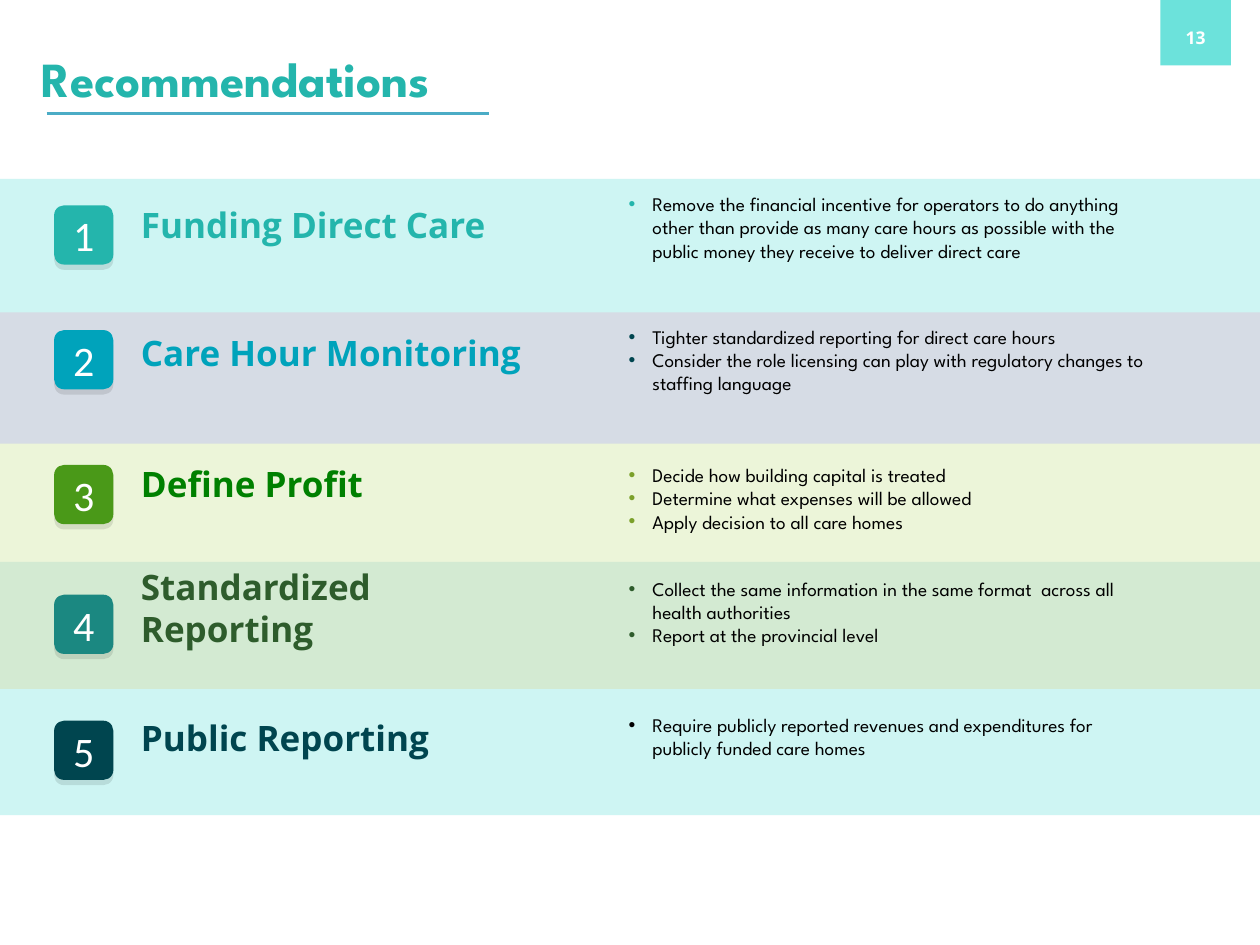
from dataclasses import dataclass

from lxml import etree
from pptx import Presentation
from pptx.dml.color import RGBColor
from pptx.enum.shapes import MSO_CONNECTOR, MSO_SHAPE
from pptx.enum.text import MSO_ANCHOR, MSO_AUTO_SIZE, PP_ALIGN
from pptx.oxml import parse_xml
from pptx.oxml.ns import nsdecls, qn
from pptx.util import Inches, Pt

RECT = MSO_SHAPE.RECTANGLE
ROUNDED = MSO_SHAPE.ROUNDED_RECTANGLE
STRAIGHT = MSO_CONNECTOR.STRAIGHT
MIDDLE = MSO_ANCHOR.MIDDLE
BOTTOM = MSO_ANCHOR.BOTTOM
LEFT = PP_ALIGN.LEFT
CENTER = PP_ALIGN.CENTER
NO_FIT = MSO_AUTO_SIZE.NONE
GROW = MSO_AUTO_SIZE.SHAPE_TO_FIT_TEXT

DISPLAY_FONT = "League Spartan"
HEADING_FONT = "Open Sans"
NUMBER_FONT = "Calibri"

COLORS = {
    "black": "000000",
    "white": "FFFFFF",
    "aqua": "6CE2DB",
    "teal": "24B5AC",
    "cyan": "00A3BB",
    "petrol": "00454F",
    "leaf": "4A9918",
    "green": "008000",
    "olive": "7BA02A",
    "forest": "2E5C2C",
    "sea": "1B8881",
    "rule": "4BACC6",
    "pale aqua": "CEF5F3",
    "pale gray": "D6DCE5",
    "pale lime": "ECF5D9",
    "pale green": "D3EAD2",
}


@dataclass
class Recommendation:
    heading: str
    points: list
    band: tuple
    band_color: str
    badge_top: float
    badge_color: str
    heading_box: tuple
    heading_color: str
    points_box: tuple
    bullet_color: str


RECOMMENDATIONS = [
    Recommendation(
        "Funding Direct Care",
        ["Remove the financial incentive for operators to do anything other than provide "
         "as many care hours as possible with the public money they receive to deliver direct care"],
        (1.42, 1.1), "pale aqua", 1.63, "teal",
        (1.66, 3.58, 0.24), "teal", (1.48, 0.84), "teal"),
    Recommendation(
        "Care Hour Monitoring",
        ["Tighter standardized reporting for direct care hours",
         "Consider the role licensing can play with regulatory changes to staffing language"],
        (2.48, 1.12), "pale gray", 2.62, "cyan",
        (2.61, 3.35, 0.37), "cyan", (2.53, 0.66), "petrol"),
    Recommendation(
        "Define Profit",
        ["Decide how building capital is treated",
         "Determine what expenses will be allowed",
         "Apply decision to all care homes"],
        (3.52, 1.18), "pale lime", 3.69, "leaf",
        (3.65, 2.28, 0.38), "green", (3.63, 0.84), "olive"),
    Recommendation(
        "Standardized Reporting",
        ["Collect the same information in the same format  across all health authorities",
         "Report at the provincial level"],
        (4.46, 1.34), "pale green", 4.72, "sea",
        (4.59, 3.35, 0.47), "forest", (4.53, 0.84), "forest"),
    Recommendation(
        "Public Reporting",
        ["Require publicly reported revenues and expenditures for publicly funded care homes"],
        (5.47, 1), "pale aqua", 5.72, "petrol",
        (5.5, 2.72, 0.71), "petrol", (5.61, 0.47), "black"),
]


def rgb(color):
    return RGBColor.from_string(COLORS[color])


def write(paragraph, text, font, size, color, bold=False, align=LEFT):
    paragraph.alignment = align
    run = paragraph.add_run()
    run.text = text
    run.font.name = font
    run.font.size = Pt(size)
    run.font.bold = bold
    run.font.color.rgb = rgb(color)


def add_block(slide, preset, left, top, width, height, color):
    block = slide.shapes.add_shape(
        preset, Inches(left), Inches(top), Inches(width), Inches(height))
    block.shadow.inherit = False
    block.fill.solid()
    block.fill.fore_color.rgb = rgb(color)
    block.line.fill.background()
    return block


def add_frame(slide, left, top, width, height):
    box = slide.shapes.add_textbox(Inches(left), Inches(top), Inches(width), Inches(height))
    box.text_frame.word_wrap = True
    return box.text_frame


def add_title(slide, text):
    title = slide.shapes.title
    title.left, title.top = Inches(0.23), Inches(0.34)
    title.width, title.height = Inches(8.07), Inches(0.56)
    frame = title.text_frame
    frame.auto_size = NO_FIT
    frame.vertical_anchor = MIDDLE
    write(frame.paragraphs[0], text, DISPLAY_FONT, 28, "teal", bold=True)


def add_title_rule(slide):
    rule = slide.shapes.add_connector(
        STRAIGHT, Inches(0.37), Inches(0.9), Inches(3.88), Inches(0.9))
    rule.line.color.rgb = rgb("rule")
    rule.line.width = Pt(2)
    etree.SubElement(rule._element.spPr, qn("a:effectLst"))


def add_page_number(slide, number):
    tab = add_block(slide, RECT, 9.21, -0.19, 0.56, 0.71, "aqua")
    frame = tab.text_frame
    frame.vertical_anchor = BOTTOM
    frame.margin_bottom = Inches(0.14)
    write(frame.paragraphs[0], number, HEADING_FONT, 10, "white", bold=True, align=CENTER)


def add_badge(slide, number, top, color):
    badge = add_block(slide, ROUNDED, 0.43, top, 0.47, 0.47, color)
    badge._element.spPr.find(qn("a:effectLst")).append(parse_xml(
        f'<a:outerShdw {nsdecls("a")} blurRad="0" dist="{Pt(3)}" dir="5400000" rotWithShape="0">'
        f'<a:srgbClr val="{COLORS["black"]}"><a:alpha val="10000"/></a:srgbClr></a:outerShdw>'))
    frame = badge.text_frame
    frame.word_wrap = False
    frame.vertical_anchor = MIDDLE
    write(frame.paragraphs[0], str(number), NUMBER_FONT, 24, "white", align=CENTER)


def add_heading(slide, text, box, color):
    frame = add_frame(slide, 1.02, *box)
    frame.vertical_anchor = MIDDLE
    write(frame.paragraphs[0], text, HEADING_FONT, 20, color, bold=True)


def set_bullet(paragraph, color):
    properties = paragraph._p.get_or_add_pPr()
    indent = Inches(0.19)
    properties.set("marL", str(indent))
    properties.set("indent", str(-indent))
    bullet_color = etree.SubElement(properties, qn("a:buClr"))
    etree.SubElement(bullet_color, qn("a:srgbClr"), val=COLORS[color])
    etree.SubElement(properties, qn("a:buFont"), typeface="Arial")
    etree.SubElement(properties, qn("a:buChar"), char="•")


def add_points(slide, points, box, bullet_color):
    top, height = box
    frame = add_frame(slide, 4.89, top, 4.37, height)
    frame.auto_size = GROW
    for index, point in enumerate(points):
        paragraph = frame.add_paragraph() if index else frame.paragraphs[0]
        write(paragraph, point, DISPLAY_FONT, 11, "black")
        set_bullet(paragraph, bullet_color)


def main():
    deck = Presentation()
    deck.slide_width, deck.slide_height = Inches(10), Inches(7.5)
    slide = deck.slides.add_slide(deck.slide_layouts[5])
    add_page_number(slide, "13")
    add_title(slide, "Recommendations")
    add_title_rule(slide)
    for item in RECOMMENDATIONS:
        top, height = item.band
        add_block(slide, RECT, 0, top, 10, height, item.band_color)
    for number, item in enumerate(RECOMMENDATIONS, start=1):
        add_badge(slide, number, item.badge_top, item.badge_color)
        add_heading(slide, item.heading, item.heading_box, item.heading_color)
        add_points(slide, item.points, item.points_box, item.bullet_color)
    deck.save("out.pptx")


if __name__ == "__main__":
    main()
